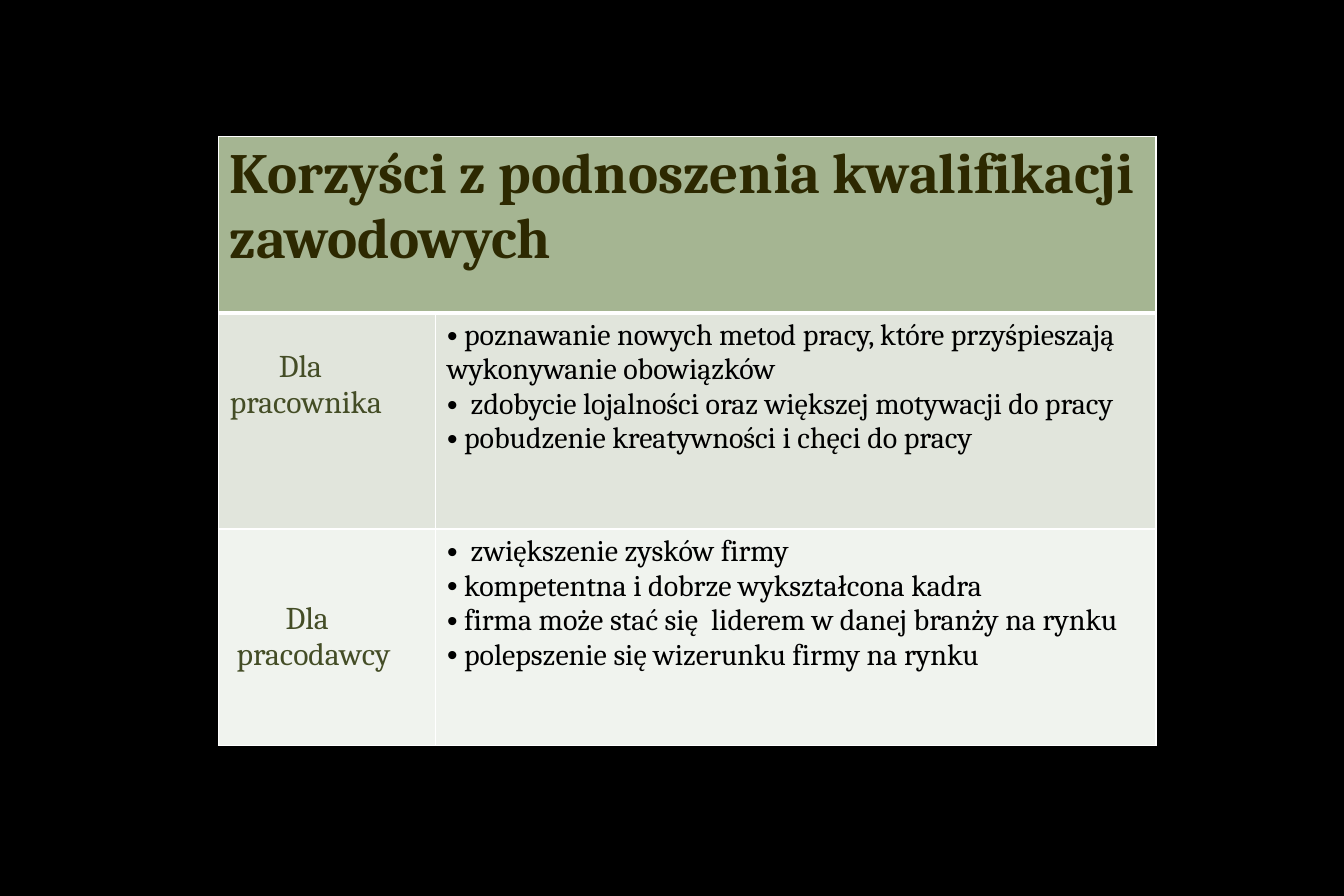
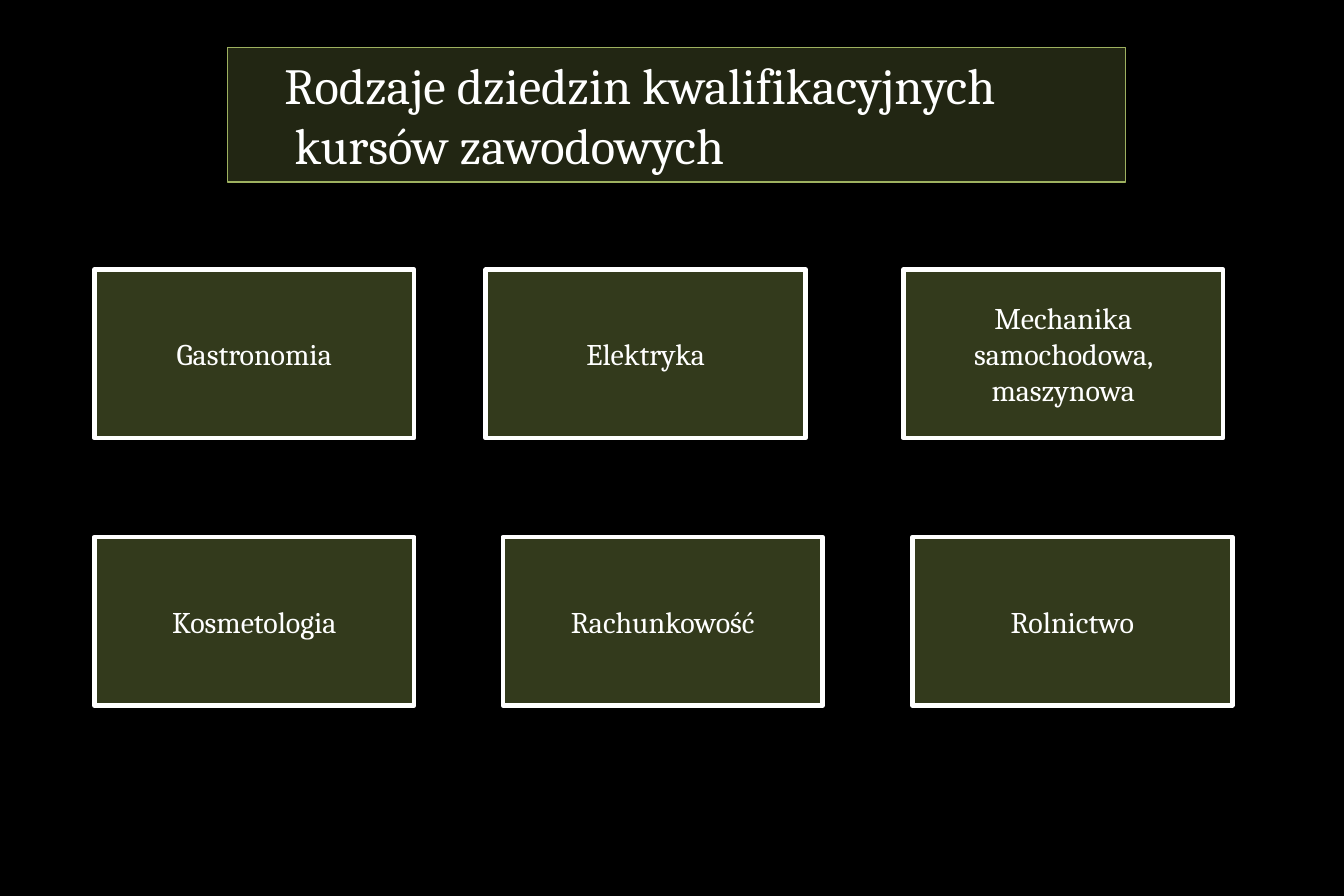
from lxml import etree
from pptx import Presentation
from pptx.dml.color import RGBColor
from pptx.enum import shapes, text
from pptx.oxml import ns
from pptx.util import Inches, Pt

FONT = "Cambria"
COLORS = {
    "background": "000000", "white": "FFFFFF", "body": "000000",
    "header": "A5B592", "heading": "2D2901", "label": "444D26",
    "employee": "E1E5DC", "employer": "F0F3EE",
    "band": "222613", "band_line": "9EB160", "card": "333A1C",
}


def add_span(para, words, size, color, bold=False):
    span = para.add_run()
    span.text = words
    span.font.name = FONT
    span.font.size = Pt(size)
    span.font.bold = bold
    span.font.color.rgb = RGBColor.from_string(COLORS[color])


def paint(box, fill, line, width):
    """Give a shape a solid fill and an outline."""
    box.fill.solid()
    box.fill.fore_color.rgb = RGBColor.from_string(COLORS[fill])
    box.line.color.rgb = RGBColor.from_string(COLORS[line])
    box.line.width = Pt(width)


deck = Presentation()
deck.slide_width, deck.slide_height = Inches(189 / 16), Inches(63 / 8)
backdrop = deck.slide_master.background.fill
backdrop.solid()
backdrop.fore_color.rgb = RGBColor.from_string(COLORS["background"])

# Slide 1: benefits table
page = deck.slides.add_slide(deck.slide_layouts[6])
table = page.shapes.add_table(3, 2, Inches(1.92), Inches(1.2),
                              Inches(8.24), Inches(5.35)).table
for column, width in zip(table.columns, (1.91, 6.33)):
    column.width = Inches(width)
for row, height in zip(table.rows, (1.55, 1.9, 1.9)):
    row.height = Inches(height)

for r, fill in enumerate(("header", "employee", "employer")):
    for c in range(2):
        cell = table.cell(r, c)
        properties = cell._tc.get_or_add_tcPr()
        for side in ("lnL", "lnR", "lnT", "lnB"):
            thick = (r, side) in ((0, "lnB"), (1, "lnT"))
            border = etree.SubElement(properties, ns.qn("a:" + side),
                                      w=str(Pt(3 if thick else 1)))
            solid = etree.SubElement(border, ns.qn("a:solidFill"))
            etree.SubElement(solid, ns.qn("a:srgbClr"), val=COLORS["white"])
        cell.fill.solid()
        cell.fill.fore_color.rgb = RGBColor.from_string(COLORS[fill])

table.cell(0, 0).merge(table.cell(0, 1))
add_span(table.cell(0, 0).text_frame.paragraphs[0],
         "Korzyści z podnoszenia kwalifikacji zawodowych", 36, "heading", True)

# label paragraphs with first-line indent, bottom margin, benefits
groups = [
    ([("Dla pracownika", 0.43)], 0.68, [
        " poznawanie nowych metod pracy, które przyśpieszają wykonywanie obowiązków",
        "  zdobycie lojalności oraz większej motywacji do pracy",
        " pobudzenie kreatywności i chęci do pracy"]),
    ([("Dla", 0.49), ("pracodawcy", 0.06)], 0.05, [
        "  zwiększenie zysków firmy",
        " kompetentna i dobrze wykształcona kadra",
        " firma może stać się  liderem w danej branży na rynku",
        " polepszenie się wizerunku firmy na rynku"]),
]
for r, (lines, bottom, benefits) in enumerate(groups, start=1):
    label = table.cell(r, 0)
    label.vertical_anchor = text.MSO_ANCHOR.MIDDLE
    label.margin_bottom = Inches(bottom)
    frame = label.text_frame
    for i, (words, indent) in enumerate(lines):
        para = frame.add_paragraph() if i else frame.paragraphs[0]
        para._p.get_or_add_pPr().set("indent", str(Inches(indent)))
        add_span(para, words, 20, "label")

    frame = table.cell(r, 1).text_frame
    for i, benefit in enumerate(benefits):
        para = frame.add_paragraph() if i else frame.paragraphs[0]
        bullet = para._p.get_or_add_pPr()
        etree.SubElement(bullet, ns.qn("a:buFont"), typeface="Arial")
        etree.SubElement(bullet, ns.qn("a:buChar"), char="•")
        add_span(para, benefit, 19, "body")

# Slide 2: course fields
page = deck.slides.add_slide(deck.slide_layouts[5])
title = page.shapes.title
title.left, title.top = Inches(2), Inches(0.42)
title.width, title.height = Inches(7.89), Inches(1.18)
paint(title, "band", "band_line", 0.75)
frame = title.text_frame
frame.auto_size = text.MSO_AUTO_SIZE.NONE
frame.vertical_anchor = text.MSO_ANCHOR.TOP
para = frame.paragraphs[0]
para.alignment = text.PP_ALIGN.LEFT
indents = para._p.get_or_add_pPr()
indents.set("marL", str(Inches(0.49)))
indents.set("indent", str(Inches(-0.09)))
add_span(para, "Rodzaje dziedzin kwalifikacyjnych", 32, "white")
para.add_line_break()
add_span(para, "kursów zawodowych", 32, "white")

card_rows = [
    (2.37, [(0.83, "Gastronomia"), (4.27, "Elektryka"),
            (7.94, "Mechanika samochodowa, maszynowa")]),
    (4.72, [(0.83, "Kosmetologia"), (4.42, "Rachunkowość"),
            (8.02, "Rolnictwo")]),
]
for top, cards in card_rows:
    for left, field in cards:
        card = page.shapes.add_shape(
            shapes.MSO_SHAPE.RECTANGLE, Inches(left), Inches(top),
            Inches(2.81), Inches(1.48))
        card.shadow.inherit = False
        paint(card, "card", "white", 3)
        card.text_frame.word_wrap = True
        card.text_frame.vertical_anchor = text.MSO_ANCHOR.MIDDLE
        para = card.text_frame.paragraphs[0]
        para.alignment = text.PP_ALIGN.CENTER
        add_span(para, field, 19, "white")

deck.save("out.pptx")
